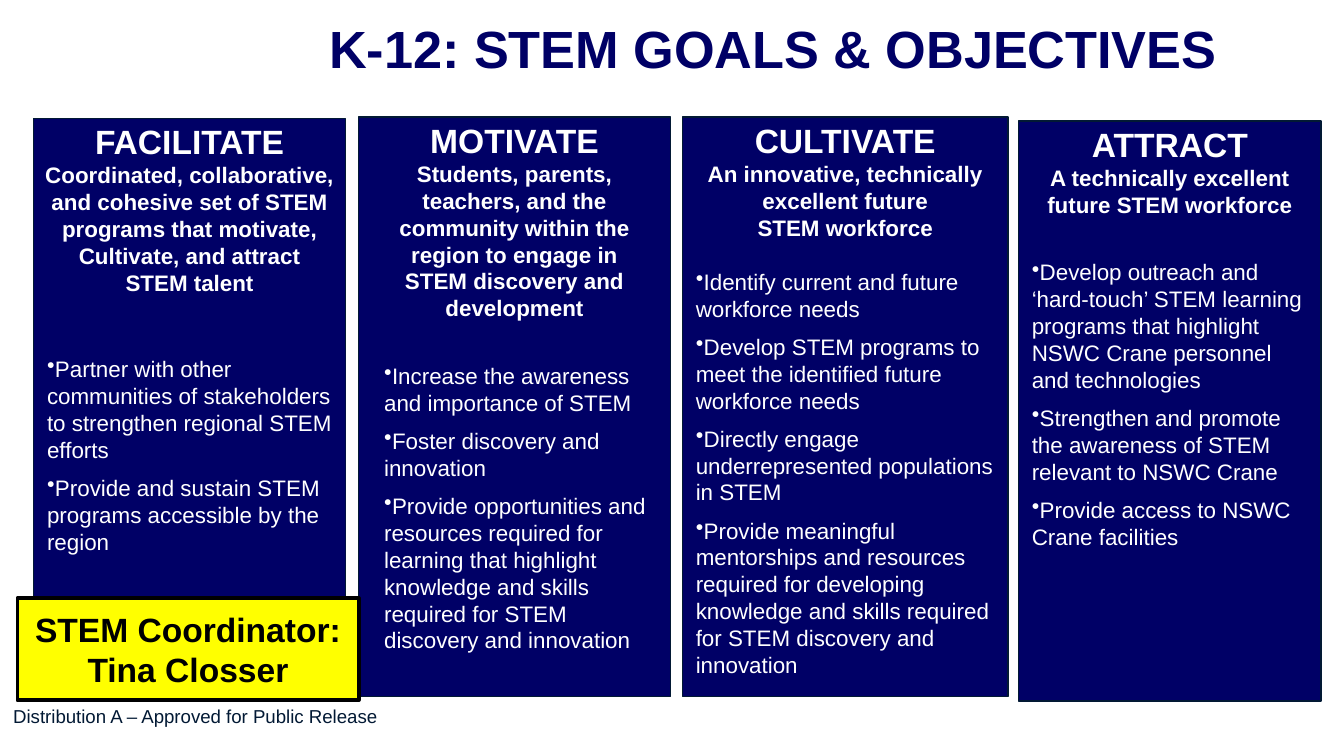
from lxml import etree
from pptx import Presentation
from pptx.dml.color import RGBColor
from pptx.enum.shapes import MSO_SHAPE
from pptx.enum.text import MSO_ANCHOR, MSO_AUTO_SIZE, PP_ALIGN
from pptx.oxml.ns import qn
from pptx.util import Cm, Pt

RECTANGLE = MSO_SHAPE.RECTANGLE
TOP, MIDDLE = MSO_ANCHOR.TOP, MSO_ANCHOR.MIDDLE
LEFT, CENTER = PP_ALIGN.LEFT, PP_ALIGN.CENTER
NO_AUTOFIT = MSO_AUTO_SIZE.NONE

NAVY, INK, WHITE, YELLOW, BLACK = "000066", "021934", "FFFFFF", "FFFF00", "000000"
TITLE_ONLY = 5

GOALS = [
    {
        "heading": "FACILITATE",
        "summary": ["Coordinated, collaborative,", "and cohesive set of STEM",
                    "programs that motivate,", "Cultivate, and attract", "STEM talent"],
        "panel": (0.64, 2.24, 5.89, 10.95),
        "objectives_area": (0.64, 6.58, 5.89, 4.11),
        "objectives_fill": NAVY,
        "objectives": [
            "Partner with other communities of stakeholders to strengthen regional STEM efforts",
            "Provide and sustain STEM programs accessible by the region",
        ],
    },
    {
        "heading": "MOTIVATE",
        "summary": ["Students, parents,", "teachers, and the", "community within the",
                    "region to engage in", "STEM discovery and", "development"],
        "panel": (6.78, 2.21, 5.89, 10.95),
        "objectives_area": (7.01, 6.71, 5.72, 5.89),
        "objectives": [
            "Increase the awareness and importance of STEM",
            "Foster discovery and innovation",
            "Provide opportunities and resources required for learning that highlight "
            "knowledge and skills required for STEM discovery and innovation",
        ],
    },
    {
        "heading": "CULTIVATE",
        "summary": ["An innovative, technically", "excellent future", "STEM workforce"],
        "panel": (12.9, 2.21, 6.15, 10.95),
        "objectives_area": (12.9, 4.93, 6.15, 8.2),
        "objectives": [
            "Identify current and future workforce needs",
            "Develop STEM programs to meet the identified future workforce needs",
            "Directly engage underrepresented populations in STEM",
            "Provide meaningful mentorships and resources required for developing "
            "knowledge and skills required for STEM discovery and innovation",
        ],
    },
    {
        "heading": "ATTRACT",
        "summary": ["A technically excellent", "future STEM workforce"],
        "panel": (19.25, 2.29, 5.72, 10.95),
        "objectives_area": (19.25, 4.75, 5.72, 5.89),
        "objectives": [
            "Develop outreach and ‘hard-touch’ STEM learning programs that highlight "
            "NSWC Crane personnel and technologies",
            "Strengthen and promote the awareness of STEM relevant to NSWC Crane",
            "Provide access to NSWC Crane facilities",
        ],
    },
]


def color(value):
    return RGBColor.from_string(value)


class SlideBuilder:
    font_name = "Arial"
    bullet = "•"
    bullet_gap = Pt(6)

    def __init__(self, slide):
        self.slide = slide

    def frame(self, shape, **formats):
        settings = {"word_wrap": True, "auto_size": NO_AUTOFIT, "vertical_anchor": TOP,
                    "margin_left": Cm(0.25), "margin_right": Cm(0.25),
                    "margin_top": Cm(0.13), "margin_bottom": Cm(0.13)}
        settings.update(formats)
        for attribute, value in settings.items():
            setattr(shape.text_frame, attribute, value)
        return shape.text_frame

    def add_lines(self, frame, lines, align=LEFT, bulleted=False):
        for index, (text, size, bold, ink) in enumerate(lines):
            paragraph = frame.add_paragraph() if index else frame.paragraphs[0]
            paragraph.alignment = align
            if bulleted:
                properties = paragraph._p.get_or_add_pPr()
                etree.SubElement(properties, qn("a:buChar")).set("char", self.bullet)
                if index:
                    paragraph.space_before = self.bullet_gap
            run = paragraph.add_run()
            run.text = text
            for attribute, value in {"name": self.font_name, "size": Pt(size), "bold": bold}.items():
                setattr(run.font, attribute, value)
            run.font.color.rgb = color(ink)

    def title(self, text, area):
        heading = self.slide.shapes.title
        for attribute, value in zip(("left", "top", "width", "height"), area):
            setattr(heading, attribute, Cm(value))
        frame = self.frame(heading, vertical_anchor=MIDDLE)
        self.add_lines(frame, [(text, 28, True, NAVY)], CENTER)

    def box(self, area, fill, outline=None, outline_width=0.75):
        shape = self.slide.shapes.add_shape(RECTANGLE, *map(Cm, area))
        shape.shadow.inherit = False
        shape.fill.solid()
        shape.fill.fore_color.rgb = color(fill)
        if outline:
            shape.line.color.rgb = color(outline)
            shape.line.width = Pt(outline_width)
        else:
            shape.line.fill.background()
        return shape

    def text_area(self, area):
        return self.slide.shapes.add_textbox(*map(Cm, area))

    def panel(self, area, heading, summary):
        frame = self.frame(self.box(area, NAVY, INK), word_wrap=False, margin_top=Cm(0.05))
        lines = [(heading, 18, True, WHITE)] + [(line, 12, True, WHITE) for line in summary]
        self.add_lines(frame, lines, CENTER)

    def objectives(self, area, items, fill=None):
        holder = self.box(area, fill) if fill else self.text_area(area)
        lines = [(item, 12, False, WHITE) for item in items]
        self.add_lines(self.frame(holder), lines, bulleted=True)

    def callout(self, area, lines):
        frame = self.frame(self.box(area, YELLOW, BLACK, 2), vertical_anchor=MIDDLE)
        self.add_lines(frame, [(line, 18, True, BLACK) for line in lines], CENTER)

    def caption(self, area, text):
        self.add_lines(self.frame(self.text_area(area)), [(text, 10, False, INK)])


def main():
    presentation = Presentation()
    presentation.slide_width, presentation.slide_height = Cm(25.4), Cm(14.28)
    builder = SlideBuilder(presentation.slides.add_slide(presentation.slide_layouts[TITLE_ONLY]))

    builder.title("K-12: STEM GOALS & OBJECTIVES", (3.81, -0.3, 21.59, 2.39))
    for goal in GOALS:
        builder.panel(goal["panel"], goal["heading"], goal["summary"])
        builder.objectives(goal["objectives_area"], goal["objectives"], goal.get("objectives_fill"))
    builder.caption((0, 13.18, 8.26, 0.69), "Distribution A – Approved for Public Release")
    builder.callout((0.33, 11.3, 6.45, 1.93), ["STEM Coordinator:", "Tina Closser"])

    presentation.save("out.pptx")


if __name__ == "__main__":
    main()
